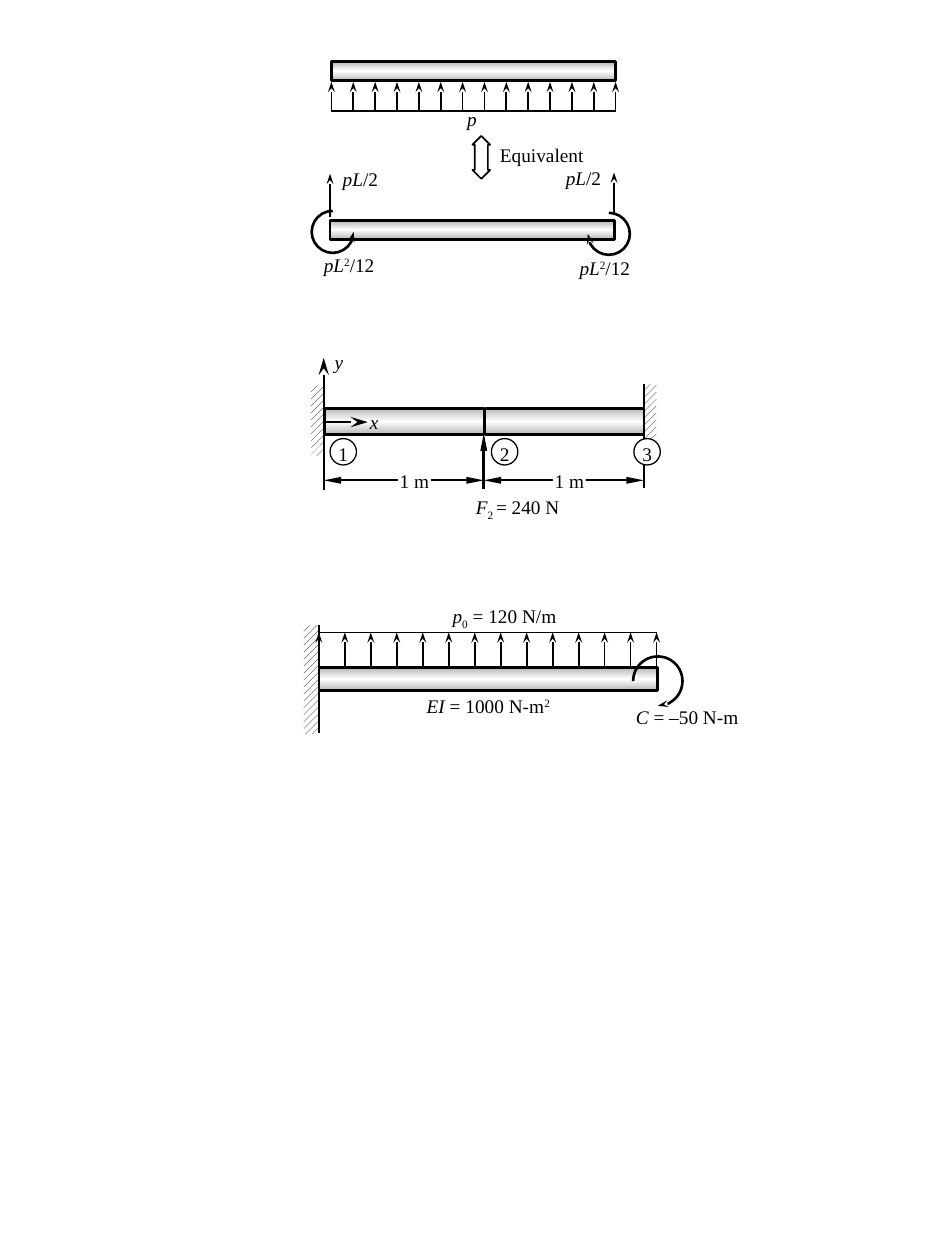
from copy import deepcopy
from lxml.etree import SubElement
from pptx import Presentation
from pptx.dml.color import RGBColor
from pptx.enum.dml import MSO_PATTERN
from pptx.enum.shapes import MSO_CONNECTOR, MSO_SHAPE
from pptx.enum.text import MSO_ANCHOR, PP_ALIGN
from pptx.oxml.ns import qn
from pptx.util import Pt

BLACK = RGBColor(0, 0, 0)
WHITE = RGBColor(255, 255, 255)
GREY = RGBColor(0xB6, 0xB6, 0xB6)
FONT = "Times New Roman"
SMALL = ("stealth", "sm", "med")
AXIS = ("stealth", "med", "lg")
LONG = ("triangle", "sm", "lg")
SHIFT = {"^": "30000", "_": "-25000"}


def stroke(part, width, head=None, tail=None):
    """Black line; each arrowhead is (kind, width, length)."""
    part.line.color.rgb = BLACK
    part.line.width = Pt(width)
    ln = part._element.spPr.find(qn("a:ln"))
    for tag, end in (("a:headEnd", head), ("a:tailEnd", tail)):
        if end:
            SubElement(ln, qn(tag), dict(zip(("type", "w", "len"), end)))


def line(slide, x1, y1, x2, y2, width=1, head=None, tail=None):
    part = slide.shapes.add_connector(
        MSO_CONNECTOR.STRAIGHT, Pt(x1), Pt(y1), Pt(x2), Pt(y2))
    stroke(part, width, head, tail)
    SubElement(part._element.spPr, qn("a:effectLst"))


def shape(slide, kind, x, y, w, h, fill=None, width=0):
    part = slide.shapes.add_shape(kind, Pt(x), Pt(y), Pt(w), Pt(h))
    part.shadow.inherit = False
    if fill is None:
        part.fill.background()
    else:
        part.fill.solid()
        part.fill.fore_color.rgb = fill
    if width:
        stroke(part, width)
    else:
        part.line.fill.background()
    return part


def write(part, *runs, align=PP_ALIGN.CENTER, inset=True):
    """Each run is (text, style): i italic, ^ raised, _ lowered."""
    frame = part.text_frame
    frame.word_wrap = True
    frame.vertical_anchor = MSO_ANCHOR.TOP
    if inset:
        frame.margin_left = frame.margin_right = 0
        frame.margin_top = frame.margin_bottom = 0
    para = frame.paragraphs[0]
    para.alignment = align
    para.font.name, para.font.size = FONT, Pt(11)
    para.font.color.rgb = BLACK
    for text, style in runs:
        run = para.add_run()
        run.text = text
        if style == "i":
            run.font.italic = True
        elif style in SHIFT:
            run._r.get_or_add_rPr().set("baseline", SHIFT[style])


def label(slide, x, y, w, h, *runs, **how):
    part = slide.shapes.add_textbox(Pt(x), Pt(y), Pt(w), Pt(h))
    write(part, *runs, **how)


def beam(slide, x, y, w, h):
    part = shape(slide, MSO_SHAPE.RECTANGLE, x, y, w, h, WHITE, 1.5)
    part.fill.gradient()
    part.fill.gradient_angle = 90
    first, mid = part.fill.gradient_stops
    first.color.rgb, first.position = GREY, 0
    mid.color.rgb, mid.position = WHITE, 0.5
    stops = part._element.spPr.find(qn("a:gradFill")).find(qn("a:gsLst"))
    last = deepcopy(stops[0])
    last.set("pos", "100000")
    stops.append(last)


def wall(slide, x, y, w, h):
    part = shape(slide, MSO_SHAPE.RECTANGLE, x, y, w, h, WHITE)
    part.fill.patterned()
    part.fill.pattern = MSO_PATTERN.WIDE_UPWARD_DIAGONAL
    part.fill.fore_color.rgb = BLACK
    part.fill.back_color.rgb = WHITE


def load(slide, x, w, foot, tip, edge, count=14):
    """Evenly spread arrows, joined by a line at height edge."""
    for i in range(count):
        at = x + w * i / (count - 1)
        line(slide, at, foot, at, tip, tail=SMALL)
    line(slide, x, edge, x + w, edge)


def moment(slide, x, y, r, start, stop, head=None, tail=None):
    """Curved arrow round centre x, y, clockwise in degrees."""
    part = shape(slide, MSO_SHAPE.ARC, x - r, y - r, 2 * r, 2 * r)
    part.adjustments[0] = start * 0.6
    part.adjustments[1] = stop * 0.6
    stroke(part, 1.5, head, tail)


def spread(slide, x, y, w):
    # Beam under a uniform load
    beam(slide, x, y, w, 10.8)
    load(slide, x, w, y + 28, y + 11.5, y + 28)
    label(slide, x + 72, y + 26, 16.6, 16.6, ("p", "i"))
    # Equivalence arrow
    part = shape(slide, MSO_SHAPE.UP_DOWN_ARROW,
                 x + 80.6, y + 42.4, 10.1, 24.5, WHITE, 1)
    part.adjustments[0], part.adjustments[1] = 0.5, 0.75
    label(slide, x + 89.2, y + 43.2, 72, 20, ("Equivalent", ""),
          align=PP_ALIGN.LEFT, inset=False)


def nodal(slide, x, y, w):
    # Beam with end forces and moments
    beam(slide, x, y, w, 10.8)
    for at, top in ((x, y - 26.7), (x + w - 0.4, y - 27.4)):
        line(slide, at, top + 24.5, at, top, 1.5, tail=SMALL)
    moment(slide, x + 1.5, y + 6.5, 12, 0, 270, head=SMALL)
    moment(slide, x + w - 3.4, y + 7.6, 12, 270, 180, tail=SMALL)
    for dx, dy in ((0, -30.2), (127.5, -31)):
        label(slide, x + dx, y + dy, 34.6, 15.8, ("pL", "i"), ("/2", ""))
    for dx, dy in ((-6.4, 18.7), (139.7, 20.2)):
        label(slide, x + dx, y + dy, 34.6, 15.8,
              ("pL", "i"), ("2", "^"), ("/12", ""))


def clamped(slide, x, y, w):
    # Two elements, with a wall at each end
    half = w / 2
    for i in range(2):
        beam(slide, x + 0.7 + half * i, y, half - 0.5, 15.1)
    wall(slide, x - 7.2, y - 13, 7.2, 40.3)
    wall(slide, x + w, y - 13.7, 7.2, 40.3)
    line(slide, x + w, y - 13.7, x + w, y + 45.3)
    # Axes
    line(slide, x, y + 46.8, x, y - 28.8, tail=AXIS)
    line(slide, x, y + 7.9, x + 25.2, y + 7.9, tail=AXIS)
    label(slide, x - 0.7, y - 33.1, 18.7, 13, ("y", "i"))
    label(slide, x + 19.4, y + 1.4, 18.7, 13, ("x", "i"))
    # Point force
    line(slide, x + half, y + 46.1, x + half, y + 14.4, 1.5, tail=LONG)
    label(slide, x + 84.2, y + 49.7, 53.3, 13,
          ("F", "i"), ("2 ", "_"), ("= 240 N", ""))
    # Spans
    for i, dx in enumerate((42.5, 131)):
        at = x + half * i
        line(slide, at, y + 41.2, at + half, y + 41.2, head=LONG, tail=LONG)
        part = shape(slide, MSO_SHAPE.RECTANGLE,
                     x + dx, y + 34.6, 18.7, 13, WHITE)
        write(part, ("1 m", ""))
    # Node numbers
    for num, dx in enumerate((3.6, 95.8, 177.2), 1):
        part = shape(slide, MSO_SHAPE.OVAL,
                     x + dx, y + 17.3, 15.1, 15.1, WHITE, 0.75)
        write(part, (str(num), ""))


def lever(slide, x, y, w):
    # Cantilever with a uniform load and an end couple
    wall(slide, x - 8.6, y - 24.5, 8.6, 62.6)
    beam(slide, x, y, w, 13)
    load(slide, x, w - 0.7, y, y - 20.2, y - 20.2)
    moment(slide, x + w, y + 7.6, 14.1, 180, 90, tail=SMALL)
    label(slide, x + 175.6, y + 21.6, 69.8, 14.4,
          ("C", "i"), (" = –50 N-m", ""))
    label(slide, x + 60.4, y - 36, 91.4, 17.3,
          ("p", "i"), ("0", "_"), (" = 120 N/m", ""))
    label(slide, x + 55.4, y + 15.1, 82.8, 14.4,
          ("EI", "i"), (" = 1000 N-m", ""), ("2", "^"))
    line(slide, x, y - 24.5, x, y + 37.5)


def main():
    deck = Presentation()
    deck.slide_width, deck.slide_height = Pt(540), Pt(720)
    slide = deck.slides.add_slide(deck.slide_layouts[6])
    nodal(slide, 188.6, 126, 162.7)
    spread(slide, 189.4, 35.3, 162.4)
    clamped(slide, 185, 233.3, 182.9)
    lever(slide, 182.2, 381.6, 193.7)
    deck.save("out.pptx")


if __name__ == "__main__":
    main()
